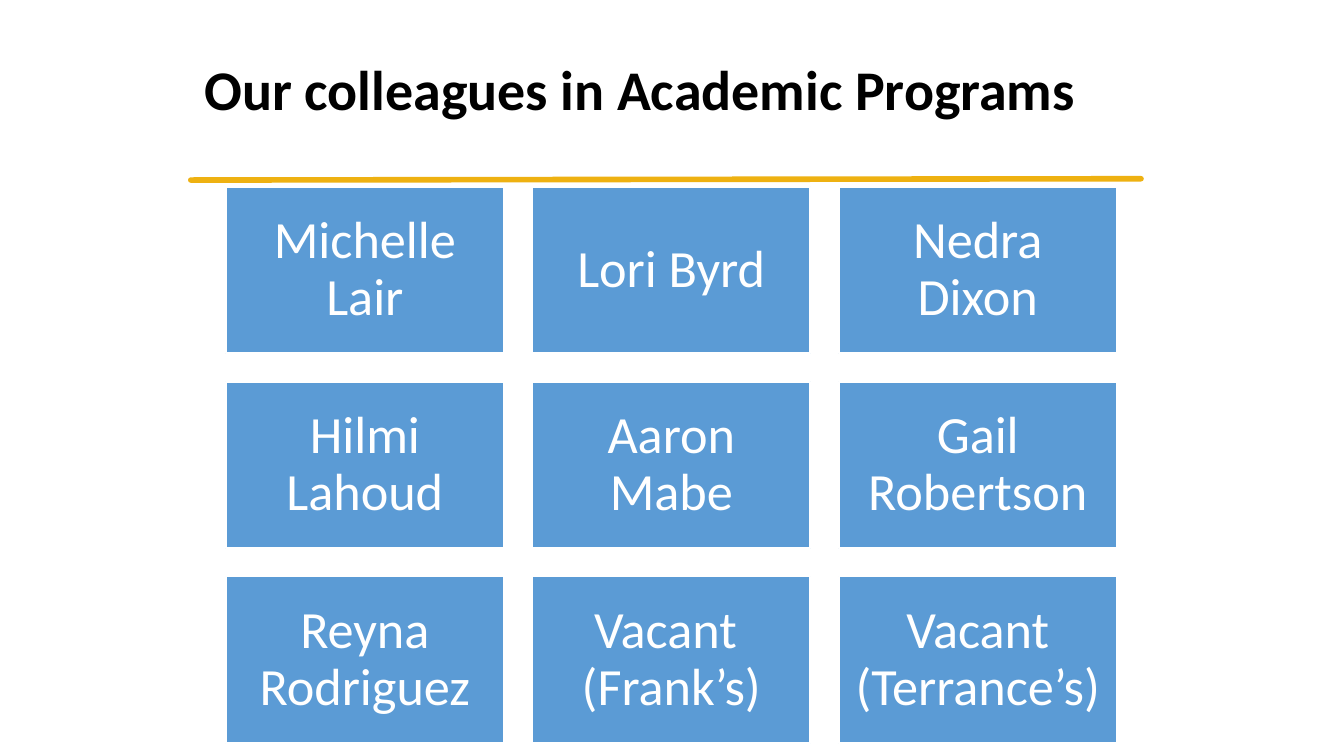
from pptx import Presentation
from pptx.dml.color import RGBColor as RGB
from pptx.enum.shapes import MSO_CONNECTOR as Conn, MSO_SHAPE as Shape
from pptx.enum.text import MSO_ANCHOR as Anchor, PP_ALIGN as Align
from pptx.oxml.ns import qn
from pptx.util import Inches, Pt
from lxml.etree import SubElement

TITLE = "Our colleagues in Academic Programs"
NAMES = [
    ["Michelle Lair", "Lori Byrd", "Nedra Dixon"],
    ["Hilmi Lahoud", "Aaron Mabe", "Gail Robertson"],
    ["Reyna Rodriguez", "Vacant \v(Frank’s)", "Vacant (Terrance’s)"],
]
COLORS = {"text": "000000", "rule": "EEB111", "card": "5B9BD5", "white": "FFFFFF"}
FONT = "Calibri"
PAGE = 10
LEFT, TOP = 1.68, 1.39
WIDE, HIGH = 2.07, 1.24
GAP = 0.21


def color(name):
    return RGB.from_string(COLORS[name])


def style(para, size, name, bold=False):
    para.line_spacing = 0.9
    font = para.font
    font.name, font.size, font.bold = FONT, Pt(size), bold
    font.color.rgb = color(name)


def add_title(slide):
    title = slide.shapes.title
    title.left, title.top = Inches(1.42), Inches(0.14)
    title.width, title.height = Inches(8.05), Inches(1.09)
    frame = title.text_frame
    frame.text = TITLE
    frame.word_wrap = True
    frame.vertical_anchor = Anchor.MIDDLE
    para = frame.paragraphs[0]
    para.alignment = Align.LEFT
    style(para, 30, "text", bold=True)


def add_rule(slide):
    rule = slide.shapes.add_connector(
        Conn.STRAIGHT, Inches(1.42), Inches(1.34), Inches(8.49), Inches(1.33))
    rule.line.color.rgb = color("rule")
    rule.line.width = Pt(3)
    rule.line._get_or_add_ln().set("cap", "rnd")
    SubElement(rule._element.spPr, qn("a:effectLst"))


def add_card(slide, name, left, top):
    card = slide.shapes.add_shape(
        Shape.RECTANGLE, Inches(left), Inches(top), Inches(WIDE), Inches(HIGH))
    card.shadow.inherit = False
    card.fill.solid()
    card.fill.fore_color.rgb = color("card")
    card.line.color.rgb = color("white")
    card.line.width = Pt(1)
    frame = card.text_frame
    frame.text = name
    frame.word_wrap = True
    frame.vertical_anchor = Anchor.MIDDLE
    frame.margin_left = frame.margin_right = Inches(0.12)
    frame.margin_top = frame.margin_bottom = Inches(0.12)
    para = frame.paragraphs[0]
    para.alignment = Align.CENTER
    style(para, 28, "white")


def main():
    deck = Presentation()
    deck.slide_width, deck.slide_height = Inches(PAGE), Inches(PAGE * 9 / 16)
    slide = deck.slides.add_slide(deck.slide_layouts[5])
    add_rule(slide)
    add_title(slide)
    for row, names in enumerate(NAMES):
        for col, name in enumerate(names):
            add_card(slide, name, LEFT + col * (WIDE + GAP), TOP + row * (HIGH + GAP))
    deck.save("out.pptx")


if __name__ == "__main__":
    main()
